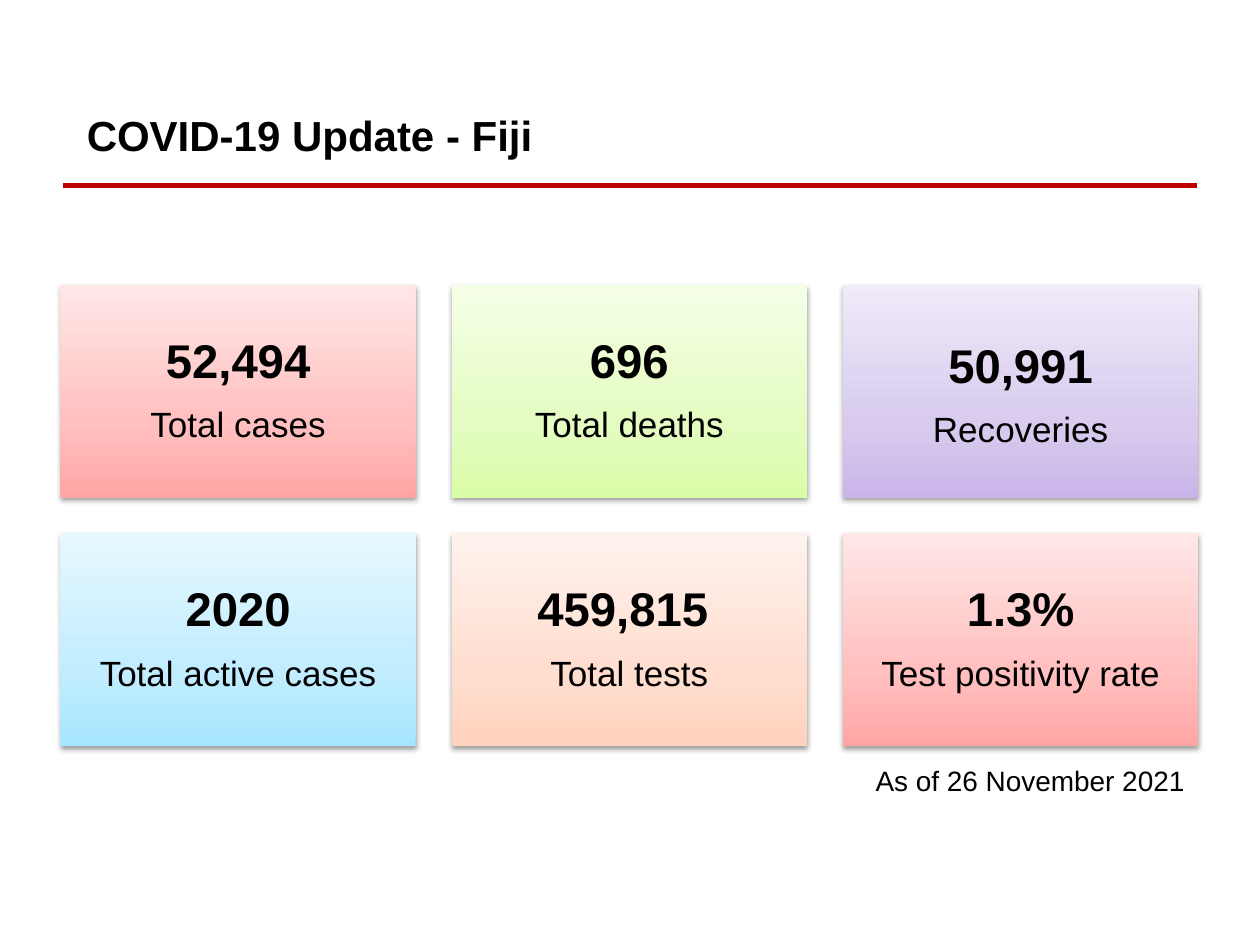
from pptx import Presentation
from pptx.dml.color import RGBColor as RGB
from pptx.enum.shapes import MSO_CONNECTOR as Conn, MSO_SHAPE as Shape
from pptx.enum.text import MSO_ANCHOR as Anchor, PP_ALIGN as Align
from pptx.oxml import parse_xml
from pptx.oxml.ns import nsdecls
from pptx.util import Inches, Pt

COLORS = {"text": "000000", "rule": "C00000", "shade": "000000"}

# Gradient stops from the bottom edge to the top
FADES = {
    "red": ("FFA6A5", "FFC0BF", "FFE7E7"),
    "green": ("DAFDA7", "E4FCC2", "F5FFE7"),
    "violet": ("C9B5E8", "D8CBEE", "F0EAF9"),
    "blue": ("A7E6FF", "C1EDFF", "E7F8FF"),
    "peach": ("FFD2BD", "FFDED0", "FFF2ED"),
}
STOPS = (0, 35, 100)

# Value, label, fade and extra top inset, in reading order
CARDS = [
    ("52,494", "Total cases", "red", 0),
    ("696", "Total deaths", "green", 0),
    ("50,991", "Recoveries", "violet", 0.08),
    ("2020", "Total active cases", "blue", 0),
    ("459,815 ", "Total tests", "peach", 0),
    ("1.3%", "Test positivity rate", "red", 0),
]


class Deck:
    font = "Arial"
    cols = 3
    left, top = 0.48, 2.26
    wide, high = 2.82, 1.69
    gap_x, gap_y = 0.285, 0.28

    def __init__(self):
        self.prs = Presentation()
        self.prs.slide_width, self.prs.slide_height = Inches(10), Inches(7.5)
        self.slide = self.prs.slides.add_slide(self.prs.slide_layouts[6])

    def add_text(self, para, text, size, bold=False):
        run = para.add_run()
        run.text = text
        run.font.name, run.font.size, run.font.bold = self.font, Pt(size), bold
        run.font.color.rgb = RGB.from_string(COLORS["text"])

    def label(self, box, text, size, bold=False, align=Align.LEFT,
              anchor=Anchor.TOP):
        frame = self.slide.shapes.add_textbox(*map(Inches, box)).text_frame
        frame.word_wrap = True
        frame.vertical_anchor = anchor
        para = frame.paragraphs[0]
        para.alignment = align
        self.add_text(para, text, size, bold)

    def rule(self, x1, x2, y, width):
        line = self.slide.shapes.add_connector(
            Conn.STRAIGHT, Inches(x1), Inches(y), Inches(x2), Inches(y))
        line.line.color.rgb = RGB.from_string(COLORS["rule"])
        line.line.width = Pt(width)
        line._element.spPr.append(parse_xml(f"<a:effectLst {nsdecls('a')}/>"))

    def fade(self, shape, name):
        stops = "".join(
            f'<a:gs pos="{pos * 1000}"><a:srgbClr val="{color}"/></a:gs>'
            for pos, color in zip(STOPS, FADES[name]))
        props = shape._element.spPr
        props.find("{*}prstGeom").addnext(parse_xml(
            f"<a:gradFill {nsdecls('a')} rotWithShape=\"1\"><a:gsLst>{stops}"
            '</a:gsLst><a:lin ang="16200000" scaled="0"/></a:gradFill>'))

    def shade(self, shape):
        shape.shadow.inherit = False
        shape._element.spPr.find("{*}effectLst").append(parse_xml(
            f"<a:outerShdw {nsdecls('a')} blurRad=\"{Pt(3.1)}\" "
            f'dist="{Pt(1.6)}" dir="5400000" rotWithShape="0">'
            f'<a:srgbClr val="{COLORS["shade"]}"><a:alpha val="38000"/>'
            "</a:srgbClr></a:outerShdw>"))

    def card(self, index, value, label, fade, drop):
        row, col = divmod(index, self.cols)
        box = (self.left + col * (self.wide + self.gap_x),
               self.top + row * (self.high + self.gap_y),
               self.wide, self.high)
        shape = self.slide.shapes.add_shape(Shape.RECTANGLE, *map(Inches, box))
        shape.line.fill.background()
        self.fade(shape, fade)
        self.shade(shape)

        frame = shape.text_frame
        frame.word_wrap = True
        frame.vertical_anchor = Anchor.MIDDLE
        frame.margin_left = frame.margin_right = Inches(0.11)
        frame.margin_bottom = Inches(0.11)
        frame.margin_top = Inches(0.11 + drop)
        first, second = frame.paragraphs[0], frame.add_paragraph()
        for para in (first, second):
            para.alignment = Align.CENTER
            para.line_spacing = 0.9
        first.space_after = Pt(11)
        self.add_text(first, value, 27, bold=True)
        self.add_text(second, label, 20)


def main():
    deck = Deck()

    # Heading
    deck.rule(0.5, 9.5, 1.47, 3)
    deck.label((0.59, 0.87, 7.65, 0.39), "COVID-19 Update - Fiji", 24,
               bold=True, anchor=Anchor.MIDDLE)

    # Figures
    for index, card in enumerate(CARDS):
        deck.card(index, *card)

    # Date
    deck.label((6.73, 6.01, 2.77, 0.37), "As of 26 November 2021", 16,
               align=Align.RIGHT)

    deck.prs.save("out.pptx")


if __name__ == "__main__":
    main()
